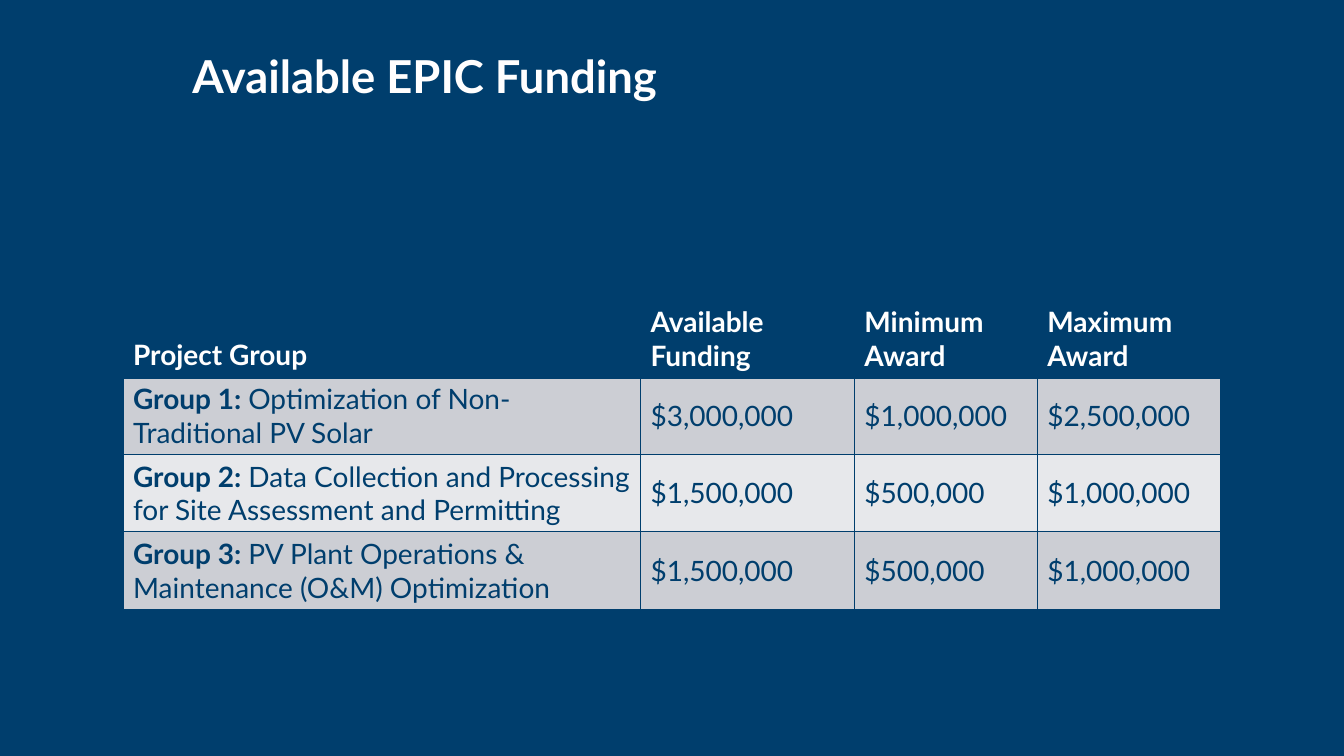
"""Build the slide that lists the available EPIC funding by project group."""
from dataclasses import dataclass

from lxml import etree
from pptx import Presentation
from pptx.dml.color import RGBColor
from pptx.enum import text
from pptx.oxml import ns
from pptx.util import Cm, Pt


@dataclass(frozen=True)
class Theme:
    font: str = "Lato"
    navy: str = "003E6D"
    white: str = "FFFFFF"
    title_color: str = "FFFEFE"
    bands: tuple[str, str] = ("CCCED4", "E7E8EB")
    title_size: float = 32.4
    table_size: float = 20


@dataclass(frozen=True)
class Run:
    words: str
    bold: bool = False


@dataclass(frozen=True)
class Group:
    label: str
    topic: str
    amounts: tuple[str, str, str]


THEME = Theme()
HEADINGS = ("Project Group", "Available Funding", "Minimum Award", "Maximum Award")
GROUPS = (
    Group("Group 1: ", "Optimization of Non-Traditional PV Solar",
          ("$3,000,000", "$1,000,000", "$2,500,000")),
    Group("Group 2: ", "Data Collection and Processing for Site Assessment and Permitting",
          ("$1,500,000", "$500,000", "$1,000,000")),
    Group("Group 3: ", "PV Plant Operations & Maintenance (O&M) Optimization",
          ("$1,500,000", "$500,000", "$1,000,000")),
)
COLUMN_WIDTHS = (13.04, 5.39, 4.61, 4.61)
ROW_HEIGHT = 1.95


def add_runs(paragraph, runs: tuple[Run, ...], size: float, color: str) -> None:
    """Append styled runs to a paragraph."""
    for item in runs:
        run = paragraph.add_run()
        run.text = item.words
        run.font.name = THEME.font
        run.font.size = Pt(size)
        run.font.bold = item.bold
        run.font.color.rgb = RGBColor.from_string(color)


def set_borders(cell, bottom_width: float) -> None:
    """Draw navy borders around a cell."""
    properties = cell._tc.get_or_add_tcPr()
    widths = {"lnL": 1, "lnR": 1, "lnT": 1, "lnB": bottom_width}
    for position, (side, width) in enumerate(widths.items()):
        line = etree.Element(ns.qn(f"a:{side}"), w=str(Pt(width)))
        fill = etree.SubElement(line, ns.qn("a:solidFill"))
        etree.SubElement(fill, ns.qn("a:srgbClr"), val=THEME.navy)
        properties.insert(position, line)


def fill_cell(cell, runs: tuple[Run, ...], color: str, background: str,
              anchor: text.MSO_ANCHOR, bottom_width: float = 1) -> None:
    """Write and style one table cell."""
    cell.fill.solid()
    cell.fill.fore_color.rgb = RGBColor.from_string(background)
    cell.vertical_anchor = anchor
    add_runs(cell.text_frame.paragraphs[0], runs, THEME.table_size, color)
    set_borders(cell, bottom_width)


def add_title(slide, words: str) -> None:
    """Add the slide title."""
    shape = slide.shapes.add_textbox(Cm(4.6), Cm(1.2), Cm(25.45), Cm(1.55))
    frame = shape.text_frame
    frame.word_wrap = True
    frame.margin_top = Cm(0.51)
    frame.margin_left = frame.margin_right = frame.margin_bottom = Cm(0.25)
    paragraph = frame.paragraphs[0]
    paragraph.line_spacing = 0.6
    add_runs(paragraph, (Run(words, True),), THEME.title_size, THEME.title_color)


def add_funding_table(slide) -> None:
    """Add the table of funding and award limits."""
    row_count = len(GROUPS) + 1
    table = slide.shapes.add_table(
        row_count, len(HEADINGS), Cm(3.1), Cm(7.55),
        Cm(sum(COLUMN_WIDTHS)), Cm(ROW_HEIGHT * row_count)).table
    for column, width in zip(table.columns, COLUMN_WIDTHS):
        column.width = Cm(width)
    for index, heading in enumerate(HEADINGS):
        fill_cell(table.cell(0, index), (Run(heading, True),), THEME.white,
                  THEME.navy, text.MSO_ANCHOR.BOTTOM, bottom_width=3)
    for row, group in enumerate(GROUPS, start=1):
        band = THEME.bands[(row - 1) % 2]
        fill_cell(table.cell(row, 0), (Run(group.label, True), Run(group.topic)),
                  THEME.navy, band, text.MSO_ANCHOR.TOP)
        for column, amount in enumerate(group.amounts, start=1):
            fill_cell(table.cell(row, column), (Run(amount),), THEME.navy, band,
                      text.MSO_ANCHOR.MIDDLE)


def main() -> None:
    """Build and save the presentation."""
    presentation = Presentation()
    presentation.slide_width = Cm(33.87)
    presentation.slide_height = Cm(19.05)
    slide = presentation.slides.add_slide(presentation.slide_layouts[6])
    slide.background.fill.solid()
    slide.background.fill.fore_color.rgb = RGBColor.from_string(THEME.navy)
    add_title(slide, "Available EPIC Funding")
    add_funding_table(slide)
    presentation.save("out.pptx")


if __name__ == "__main__":
    main()
